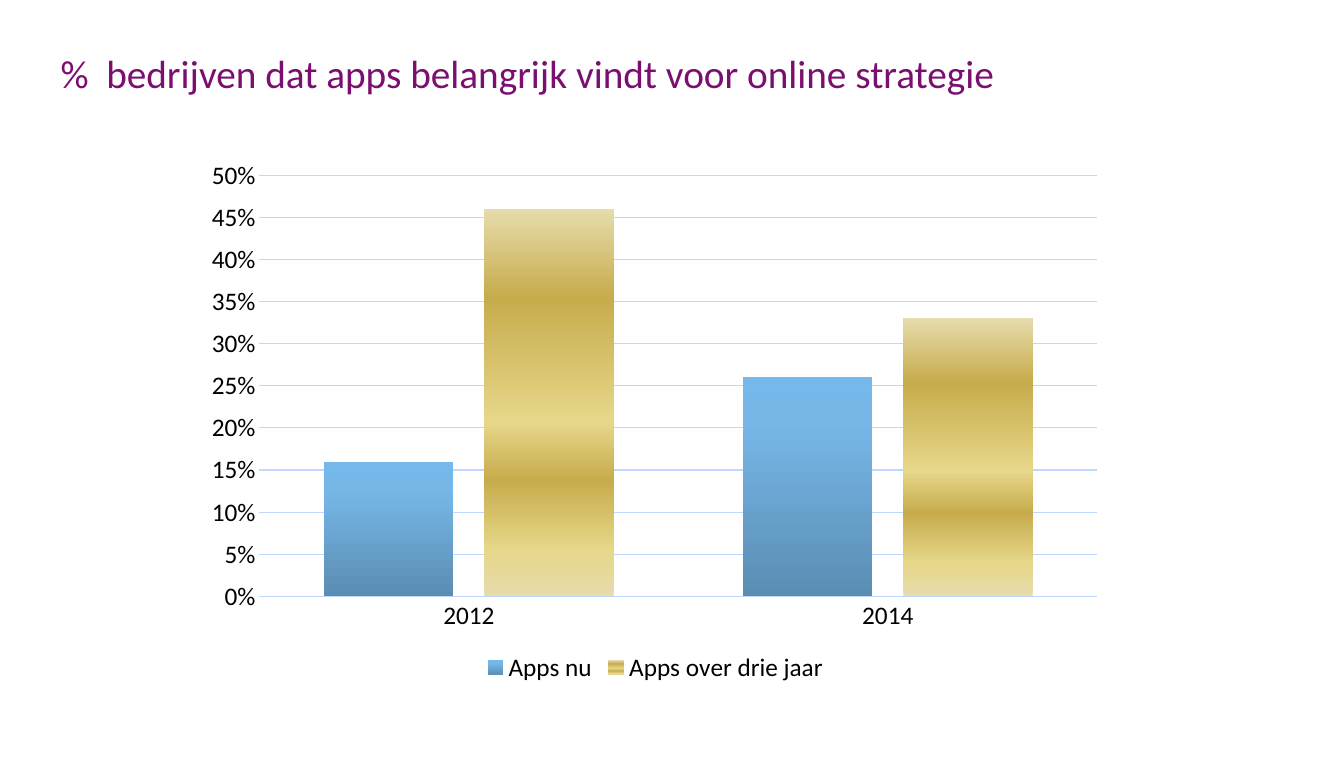
from dataclasses import dataclass

from lxml.etree import SubElement
from pptx import Presentation
from pptx.chart.chart import Chart
from pptx.chart.data import CategoryChartData
from pptx.chart.series import BarSeries
from pptx.dml.color import RGBColor
from pptx.dml.line import LineFormat
from pptx.enum.chart import XL_CHART_TYPE, XL_LEGEND_POSITION, XL_TICK_MARK
from pptx.enum.text import MSO_ANCHOR
from pptx.oxml import parse_xml
from pptx.oxml.ns import nsdecls, qn
from pptx.slide import Slide
from pptx.util import Pt

FONT = "Calibri"
BLACK = RGBColor(0x00, 0x00, 0x00)
PURPLE = RGBColor(0x7B, 0x0F, 0x70)
PALE = RGBColor(0xBF, 0xD8, 0xFF)
STEEL = RGBColor(0x5B, 0x8D, 0xB3)
SKY = RGBColor(0x76, 0xB7, 0xE8)
AZURE = RGBColor(0x74, 0xB8, 0xEC)
CREAM = RGBColor(0xE6, 0xDC, 0xAC)
STRAW = RGBColor(0xE6, 0xD7, 0x8A)
GOLD = RGBColor(0xC7, 0xAC, 0x4C)


@dataclass(frozen=True)
class Stop:
    percent: int
    color: RGBColor


@dataclass(frozen=True)
class Bars:
    name: str
    values: tuple[float, ...]
    stops: tuple[Stop, ...]


YEARS = ("2012", "2014")
GROUPS = (
    Bars("Apps nu", (0.16, 0.26),
         (Stop(0, STEEL), Stop(80, SKY), Stop(100, AZURE))),
    Bars("Apps over drie jaar", (0.46, 0.33),
         (Stop(0, CREAM), Stop(12, STRAW), Stop(30, GOLD),
          Stop(45, STRAW), Stop(77, GOLD), Stop(100, CREAM))),
)
FRAME = {"x": 0.07, "y": 0.05, "w": 0.91, "h": 0.78}


def add_title(slide: Slide) -> None:
    box = slide.shapes.add_textbox(Pt(28.8), Pt(30.2), Pt(898.6), Pt(52.6))
    frame = box.text_frame
    frame.word_wrap = True
    frame.vertical_anchor = MSO_ANCHOR.MIDDLE
    frame.margin_left, frame.margin_right = Pt(14.4), Pt(8.6)
    frame.margin_top = frame.margin_bottom = 0
    line = frame.paragraphs[0]
    line.line_spacing = Pt(24)
    line.font.name, line.font.size = FONT, Pt(28)
    line.font.color.rgb = PURPLE
    line.add_run().text = "%"
    gap = line.add_run()
    gap.text = " "
    gap.font.size = Pt(28)
    gap._r.get_or_add_rPr().set("spc", "630")
    line.add_run().text = "bedrijven dat apps belangrijk vindt voor online strategie"


def shade(bars: BarSeries, stops: tuple[Stop, ...]) -> None:
    bars.invert_if_negative = False
    fill = SubElement(bars._element.get_or_add_spPr(), qn("a:gradFill"))
    ramp = SubElement(fill, qn("a:gsLst"))
    for stop in stops:
        mark = SubElement(ramp, qn("a:gs"), pos=str(stop.percent * 1000))
        SubElement(mark, qn("a:srgbClr"), val=str(stop.color))
    SubElement(fill, qn("a:lin"), ang="16200000", scaled="0")


def place_plot(chart: Chart) -> None:
    area = chart._chartSpace.find(".//" + qn("c:plotArea"))
    for old in area.findall(qn("c:layout")):
        area.remove(old)
    modes = "".join(f'<c:{side}Mode val="edge"/>' for side in "xy")
    sizes = "".join(f'<c:{key} val="{part}"/>' for key, part in FRAME.items())
    area.insert(0, parse_xml(
        f'<c:layout {nsdecls("c")}><c:manualLayout><c:layoutTarget val="inner"/>'
        f"{modes}{sizes}</c:manualLayout></c:layout>"))


def style_line(line: LineFormat) -> None:
    line.color.rgb = PALE
    line.width = Pt(0.75)


def style_axes(chart: Chart) -> None:
    base, scale = chart.category_axis, chart.value_axis
    for axis in (base, scale):
        axis.major_tick_mark = axis.minor_tick_mark = XL_TICK_MARK.NONE
    style_line(base.format.line)
    scale.format.line.fill.background()
    scale.has_major_gridlines = True
    style_line(scale.major_gridlines.format.line)
    scale.minimum_scale, scale.maximum_scale = 0, 0.5
    scale.major_unit = 0.05
    scale.tick_labels.number_format = "0%"
    scale.tick_labels.number_format_is_linked = False


def add_bars(slide: Slide) -> None:
    data = CategoryChartData(number_format="0%")
    data.categories = YEARS
    for group in GROUPS:
        data.add_series(group.name, group.values)
    chart = slide.shapes.add_chart(
        XL_CHART_TYPE.COLUMN_CLUSTERED,
        Pt(139), Pt(105.8), Pt(656.6), Pt(385.2), data).chart
    chart.has_title = False
    chart.font.name, chart.font.size = FONT, Pt(18)
    chart.font.color.rgb = BLACK
    chart.has_legend = True
    chart.legend.position = XL_LEGEND_POSITION.BOTTOM
    chart.legend.include_in_layout = False
    plot = chart.plots[0]
    plot.gap_width, plot.overlap = 100, -24
    plot.vary_by_categories = False
    for bars, group in zip(plot.series, GROUPS):
        shade(bars, group.stops)
    style_axes(chart)
    place_plot(chart)


def main() -> None:
    deck = Presentation()
    deck.slide_width, deck.slide_height = Pt(958.3), Pt(540)
    slide = deck.slides.add_slide(deck.slide_layouts[6])
    add_title(slide)
    add_bars(slide)
    deck.save("out.pptx")


if __name__ == "__main__":
    main()
